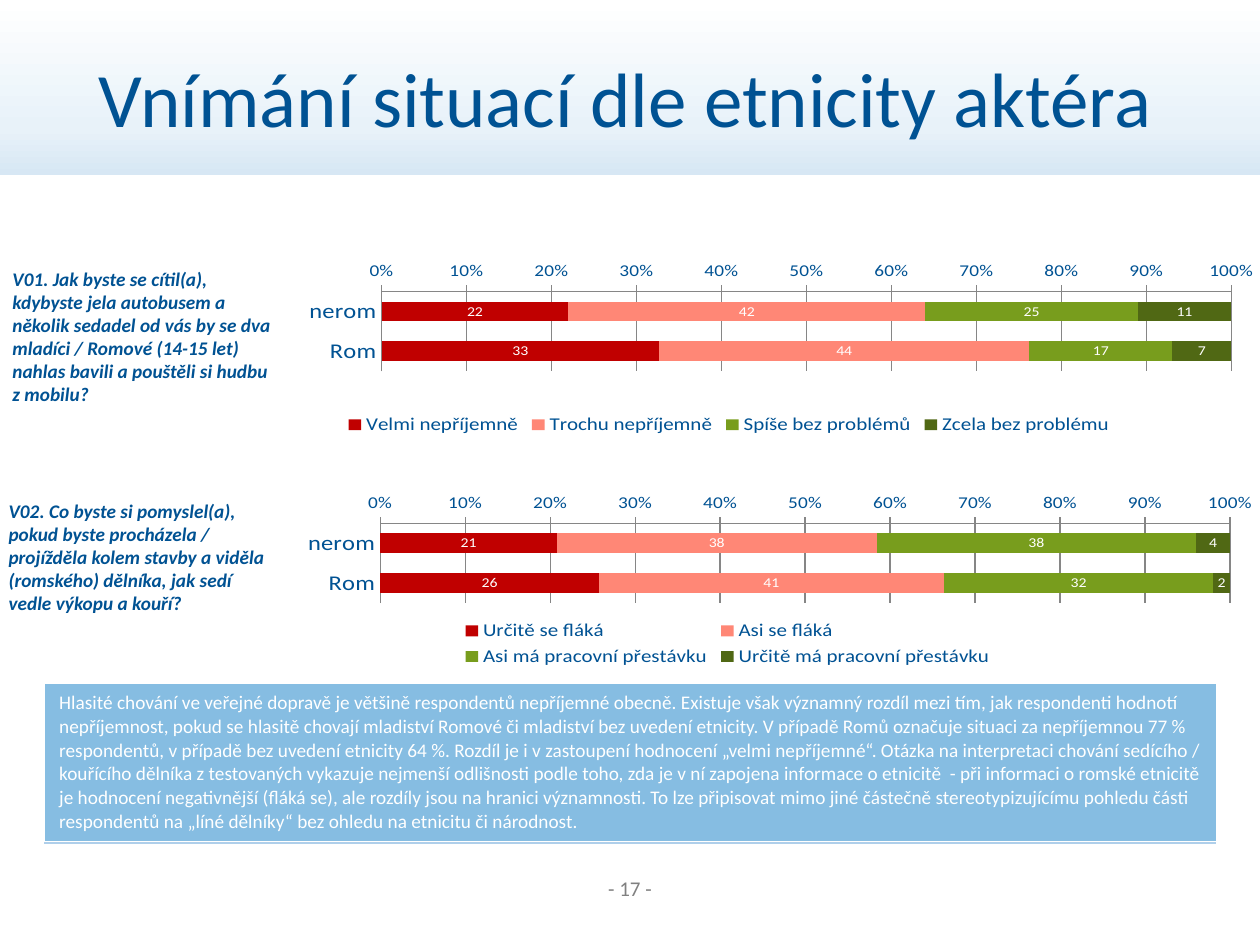
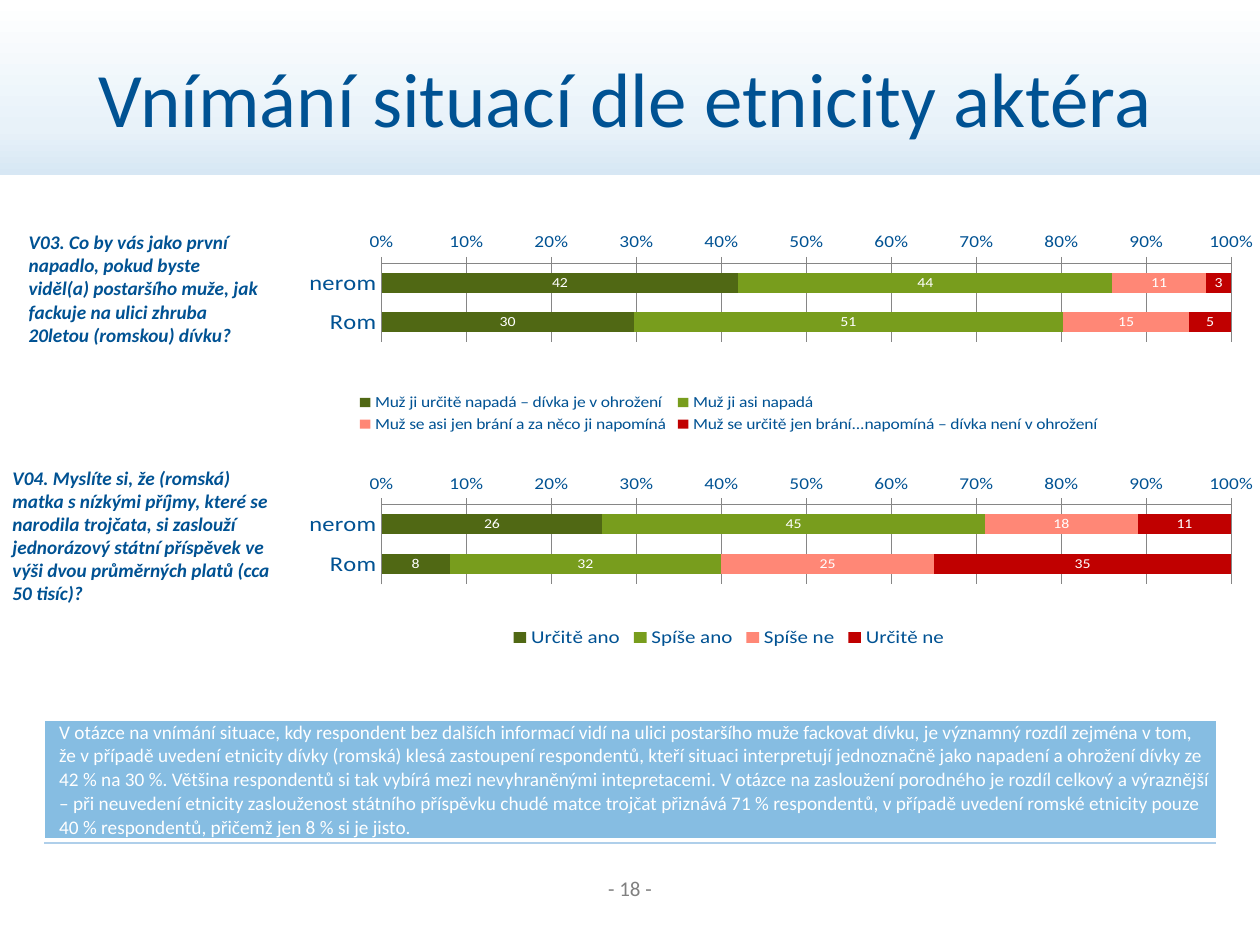
import copy
from dataclasses import dataclass

import lxml.etree
import pptx
import pptx.chart.data
import pptx.dml.color
import pptx.enum.chart
import pptx.enum.shapes
import pptx.enum.text
import pptx.oxml.ns
import pptx.util

qn = pptx.oxml.ns.qn
Align = pptx.enum.text.PP_ALIGN
Anchor = pptx.enum.text.MSO_ANCHOR
WIDTH, HEIGHT = pptx.util.Inches(10), pptx.util.Inches(7.5)


@dataclass(frozen=True)
class Theme:
    font: str = "Calibri"
    blue: str = "005293"
    white: str = "FFFFFF"
    grey: str = "808080"
    grid: str = "868686"
    rule: str = "AFCFEA"
    comment: str = "86BDE2"
    band: tuple = ((0, "FFFFFF"), (0.73, "E8F2F9"), (1, "D7E7F4"))
    # Answers from the worst to the best
    answers: tuple = ("C00000", "FF8776", "789D1D", "506814")
    title_size: int = 44
    category_size: int = 14
    legend_size: int = 12
    small_legend_size: int = 10
    body_size: int = 11
    label_size: int = 9


THEME = Theme()
CATEGORIES = ("nerom", "Rom")
TITLE = "Vnímání situací dle etnicity aktéra"


# Basic helpers
def rgb(code):
    return pptx.dml.color.RGBColor.from_string(code)


def area(left, top, width, height):
    """Turn percentages of the slide into left, top, width and height."""
    return (round(WIDTH * left / 100), round(HEIGHT * top / 100),
            round(WIDTH * width / 100), round(HEIGHT * height / 100))


def style_font(font, size, color, bold=False, italic=False):
    font.name, font.size = THEME.font, pptx.util.Pt(size)
    font.bold, font.italic = bold, italic
    font.color.rgb = rgb(color)


def write(frame, text, size=THEME.body_size, color=THEME.blue,
          align=Align.LEFT, **emphasis):
    frame.word_wrap = True
    para = frame.paragraphs[0]
    para.text, para.alignment = text, align
    for span in para.runs:
        style_font(span.font, size, color, **emphasis)


def add_text(page, place, text, anchor=Anchor.TOP, **text_format):
    box = page.shapes.add_textbox(*area(*place))
    box.text_frame.vertical_anchor = anchor
    write(box.text_frame, text, **text_format)


# Parts every slide shares
def add_band(page):
    band = page.shapes.add_shape(pptx.enum.shapes.MSO_SHAPE.RECTANGLE,
                                 *area(0, 0, 100, 18.53))
    band.shadow.inherit = False
    band.line.fill.background()
    band.fill.gradient()
    band.fill.gradient_angle = 270
    stops = band._element.find(".//" + qn("a:gsLst"))
    stops.insert(1, copy.deepcopy(stops[0]))
    for stop, (position, color) in zip(band.fill.gradient_stops, THEME.band):
        stop.position, stop.color.rgb = position, rgb(color)


def add_rule(page):
    left, top, width, _ = area(3.5, 89.2, 93, 0)
    rule = page.shapes.add_connector(pptx.enum.shapes.MSO_CONNECTOR.STRAIGHT,
                                     left, top, left + width, top)
    rule.line.color.rgb, rule.line.width = rgb(THEME.rule), pptx.util.Pt(0.75)
    lxml.etree.SubElement(rule._element.spPr, qn("a:effectLst"))


def add_page(deck, number):
    page = deck.slides.add_slide(deck.slide_layouts[6])
    add_band(page)
    add_rule(page)
    add_text(page, (43.7, 92, 12.6, 4), f"- {number} -", size=THEME.legend_size,
             color=THEME.grey, align=Align.CENTER)
    add_text(page, (2, 1.87, 95.3, 16.67), TITLE, anchor=Anchor.MIDDLE,
             size=THEME.title_size, align=Align.CENTER)
    return page


def add_comment(page, top, height, text):
    frame = page.shapes.add_table(1, 1, *area(3.5, top, 93.1, height))
    cell = frame.table.cell(0, 0)
    cell.fill.solid()
    cell.fill.fore_color.rgb = rgb(THEME.comment)
    cell.vertical_anchor = Anchor.MIDDLE
    cell.margin_left = pptx.util.Inches(0.12)
    cell.margin_right = cell.margin_top = cell.margin_bottom = 0
    write(cell.text_frame, text, color=THEME.white)


def add_question(page, place, text):
    add_text(page, place, text, bold=True, italic=True)


# Charts of answers
def place_plot(chart, plot_height):
    area_element = chart._chartSpace.find(".//" + qn("c:plotArea"))
    for old in area_element.findall(qn("c:layout")):
        area_element.remove(old)
    layout = lxml.etree.Element(qn("c:layout"))
    manual = lxml.etree.SubElement(layout, qn("c:manualLayout"))
    for tag, value in (("layoutTarget", "inner"), ("xMode", "edge"),
                       ("yMode", "edge"), ("x", 0.173), ("y", 0.033),
                       ("w", 0.8), ("h", plot_height)):
        lxml.etree.SubElement(manual, qn("c:" + tag)).set("val", str(value))
    area_element.insert(0, layout)


def style_axes(chart):
    tick = pptx.enum.chart.XL_TICK_MARK
    category, value = chart.category_axis, chart.value_axis
    category.reverse_order = True
    category.crosses = pptx.enum.chart.XL_AXIS_CROSSES.MAXIMUM
    category.major_tick_mark = tick.NONE
    value.major_tick_mark = tick.OUTSIDE
    value.major_unit = 0.1
    value.has_major_gridlines = True
    value.tick_labels.number_format = "0%"
    value.tick_labels.number_format_is_linked = False
    for line in (category.format.line, value.format.line,
                 value.major_gridlines.format.line):
        line.color.rgb, line.width = rgb(THEME.grid), pptx.util.Pt(0.75)
    style_font(category.tick_labels.font, THEME.category_size, THEME.blue)
    style_font(value.tick_labels.font, THEME.body_size, THEME.blue)


def style_series(series, color):
    series.format.fill.solid()
    series.format.fill.fore_color.rgb = rgb(color)
    labels = series.data_labels
    labels.show_value = True
    labels.number_format, labels.number_format_is_linked = "#,##0", False
    style_font(labels.font, THEME.label_size, THEME.white)


def add_answers(page, top, answers, colors, left=15.7, height=18.93,
                plot_height=0.521, legend_size=THEME.legend_size):
    data = pptx.chart.data.CategoryChartData()
    data.categories = CATEGORIES
    for name, values in answers.items():
        data.add_series(name, values)
    kind = pptx.enum.chart.XL_CHART_TYPE.BAR_STACKED_100
    chart = page.shapes.add_chart(kind, *area(left, top, 84.3, height), data).chart
    chart.has_title = False
    chart.font.name = THEME.font
    chart.has_legend = True
    chart.legend.position = pptx.enum.chart.XL_LEGEND_POSITION.BOTTOM
    chart.legend.include_in_layout = False
    style_font(chart.legend.font, legend_size, THEME.blue)
    plot = chart.plots[0]
    plot.gap_width, plot.overlap, plot.vary_by_categories = 100, 100, False
    for series, color in zip(plot.series, colors):
        style_series(series, color)
    style_axes(chart)
    place_plot(chart, plot_height)


# Slides
def add_transport_and_worker(deck):
    page = add_page(deck, 17)
    add_comment(
        page, 72.27, 16.8,
        "Hlasité chování ve veřejné dopravě je většině respondentů nepříjemné obecně. "
        "Existuje však významný rozdíl mezi tím, jak respondenti hodnotí nepříjemnost, "
        "pokud se hlasitě chovají mladiství Romové či mladiství bez uvedení etnicity. "
        "V případě Romů označuje situaci za nepříjemnou 77 % respondentů, v případě bez "
        "uvedení etnicity 64 %. Rozdíl je i v zastoupení hodnocení „velmi nepříjemné“. "
        "Otázka na interpretaci chování sedícího / kouřícího dělníka z testovaných "
        "vykazuje nejmenší odlišnosti podle toho, zda je v ní zapojena informace o "
        "etnicitě  - při informaci o romské etnicitě je hodnocení negativnější (fláká "
        "se), ale rozdíly jsou na hranici významnosti. To lze připisovat mimo jiné "
        "částečně stereotypizujícímu pohledu části respondentů na „líné dělníky“ bez "
        "ohledu na etnicitu či národnost.")
    add_answers(page, 27.6, {
        "Velmi nepříjemně": (22, 33),
        "Trochu nepříjemně": (42, 44),
        "Spíše bez problémů": (25, 17),
        "Zcela bez problému": (11, 7),
    }, THEME.answers)
    add_question(
        page, (0, 27.6, 23.2, 16.13),
        "V01. Jak byste se cítil(a), kdybyste jela autobusem a několik sedadel od vás "
        "by se dva mladíci / Romové (14-15 let) nahlas bavili a pouštěli si hudbu z "
        "mobilu?")
    add_answers(page, 52.13, {
        "Určitě se fláká": (21, 26),
        "Asi se fláká": (38, 41),
        "Asi má pracovní přestávku": (38, 32),
        "Určitě má pracovní přestávku": (4, 2),
    }, THEME.answers, left=15.6)
    add_question(
        page, (-0.3, 52.13, 22.4, 13.73),
        "V02. Co byste si pomyslel(a), pokud byste procházela / projížděla kolem stavby "
        "a viděla (romského) dělníka, jak sedí vedle výkopu a kouří?")


def add_attack_and_benefit(deck):
    page = add_page(deck, 18)
    best_first = THEME.answers[::-1]
    add_comment(
        page, 76.27, 12.53,
        "V otázce na vnímání situace, kdy respondent bez dalších informací vidí na ulici "
        "postaršího muže fackovat dívku, je významný rozdíl zejména v tom,\n"
        "že v případě uvedení etnicity dívky (romská) klesá zastoupení respondentů, kteří "
        "situaci interpretují jednoznačně jako napadení a ohrožení dívky ze 42 % na 30 %. "
        "Většina respondentů si tak vybírá mezi nevyhraněnými intepretacemi. V otázce na "
        "zasloužení porodného je rozdíl celkový a výraznější – při neuvedení etnicity "
        "zaslouženost státního příspěvku chudé matce trojčat přiznává 71 % respondentů, "
        "v případě uvedení romské etnicity pouze 40 % respondentů, přičemž jen 8 % si je "
        "jisto.")
    add_answers(page, 24.53, {
        "Muž ji určitě napadá – dívka je v ohrožení": (42, 30),
        "Muž ji asi napadá": (44, 51),
        "Muž se asi jen brání a za něco ji napomíná": (11, 15),
        "Muž se určitě jen brání...napomíná – dívka není v ohrožení": (3, 5),
    }, best_first, height=21.73, plot_height=0.436,
        legend_size=THEME.small_legend_size)
    add_question(
        page, (1.3, 23.73, 20.7, 13.73),
        "V03. Co by vás jako první napadlo, pokud byste viděl(a) postaršího muže, jak "
        "fackuje na ulici zhruba 20letou (romskou) dívku?")
    add_answers(page, 50.13, {
        "Určitě ano": (26, 8),
        "Spíše ano": (45, 32),
        "Spíše ne": (18, 25),
        "Určitě ne": (11, 35),
    }, best_first)
    add_question(
        page, (0, 48.67, 23.2, 16.13),
        "V04. Myslíte si, že (romská) matka s nízkými příjmy, které se narodila trojčata, "
        "si zaslouží jednorázový státní příspěvek ve výši dvou průměrných platů (cca 50 "
        "tisíc)?")


def main():
    deck = pptx.Presentation()
    deck.slide_width, deck.slide_height = WIDTH, HEIGHT
    add_transport_and_worker(deck)
    add_attack_and_benefit(deck)
    deck.save("out.pptx")


if __name__ == "__main__":
    main()
